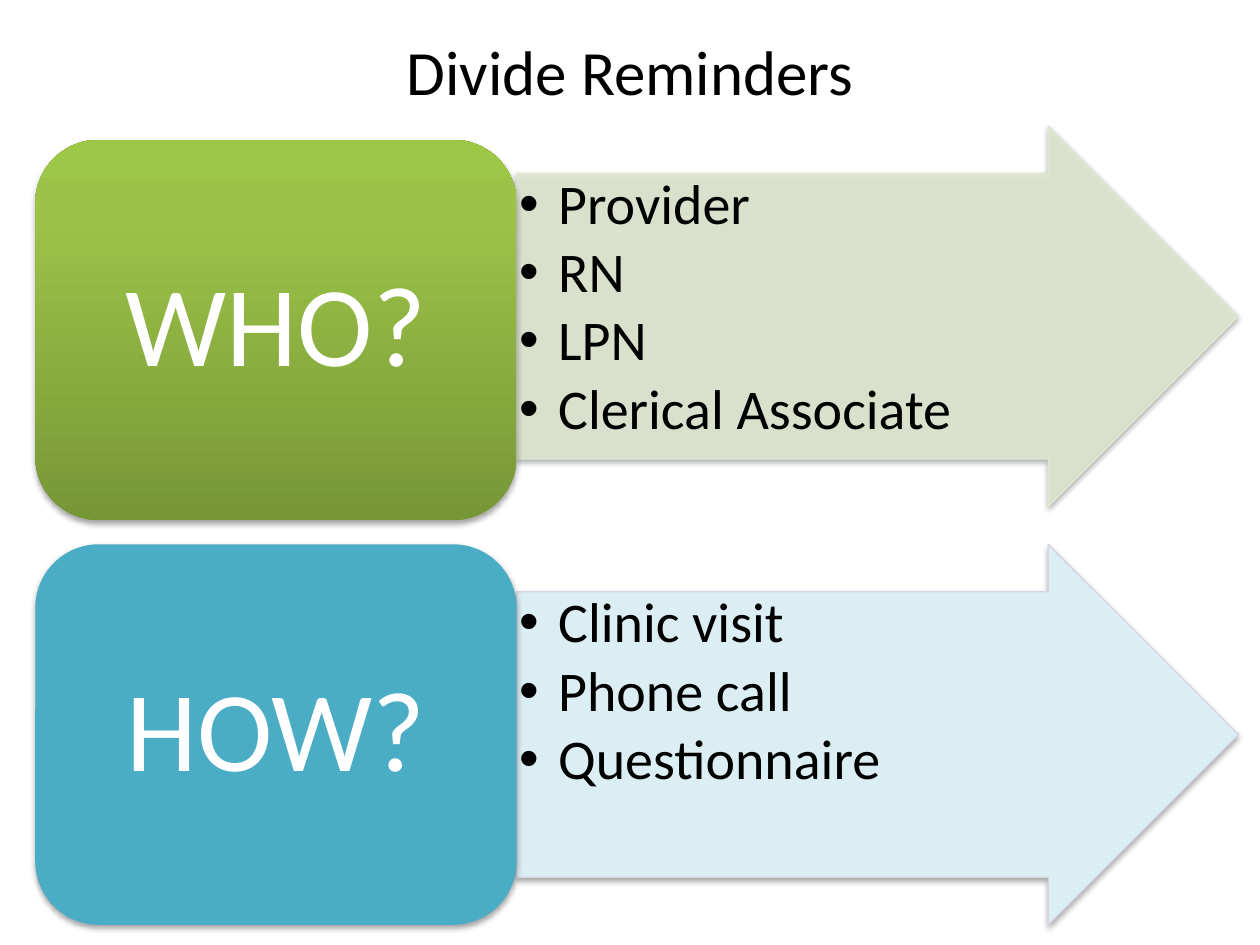
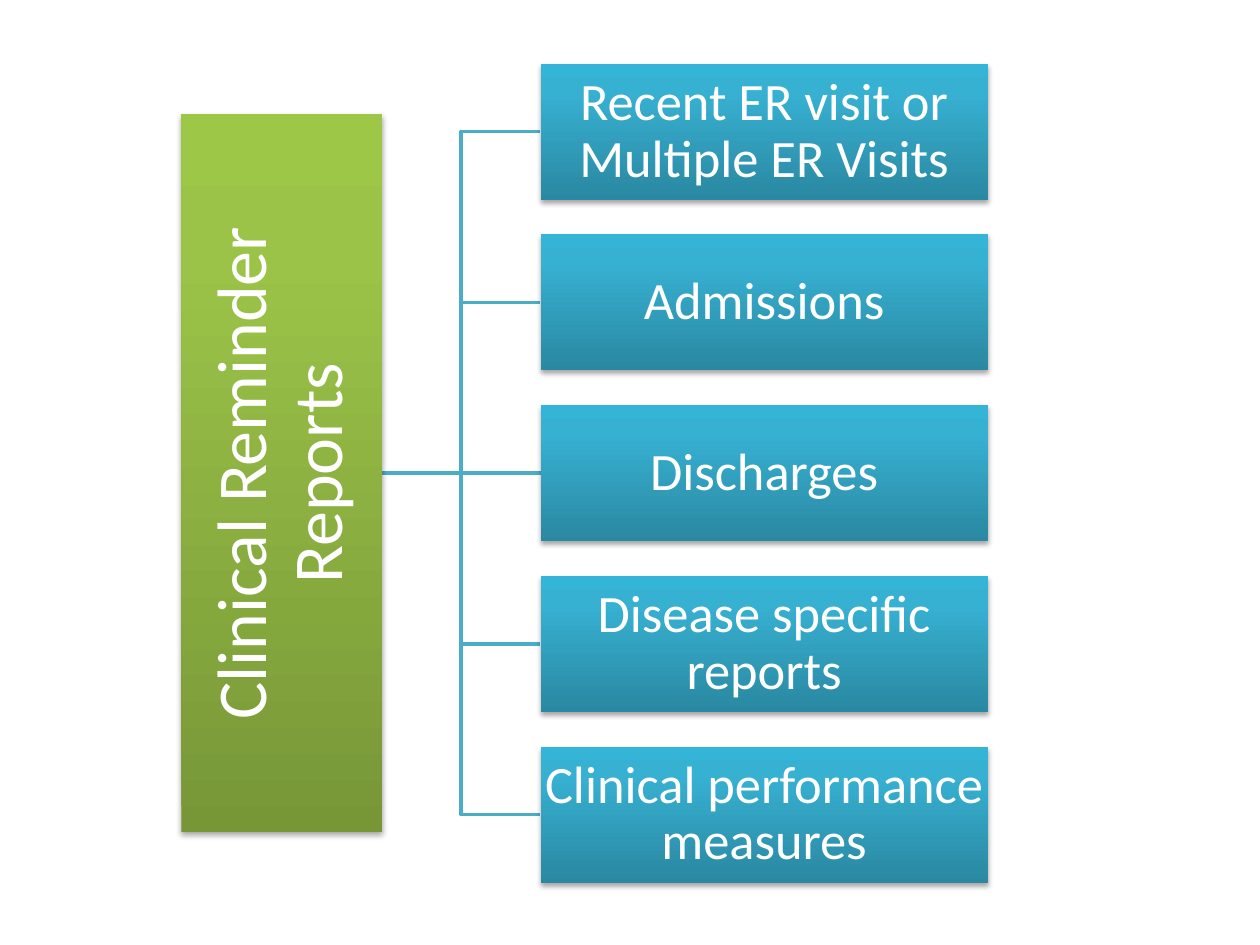
from copy import deepcopy
from lxml import etree
from pptx import Presentation
from pptx import util as u
from pptx.dml.color import RGBColor
from pptx.enum import shapes, text
from pptx.oxml.ns import qn

HUES = {
    "white": "FFFFFF", "black": "000000", "teal": "4BACC6",
    "sage": "DEE7D1", "ice": "DBEEF4", "lilac": "D8D3E0",
    "green": ["779737", "9BC348", "9DC746"],
    "blue": ["2A88A2", "37B1D2", "34B4D6"],
}
FONT = "Calibri"
KIND = shapes.MSO_SHAPE
MID = text.MSO_ANCHOR.MIDDLE

deck = Presentation()
deck.slide_width, deck.slide_height = u.Inches(10), u.Inches(7.5)
COL, ROW = deck.slide_width / 100, deck.slide_height / 75


def area(col, row, wide, high):
    """Turn grid cells into left, top, width and height."""
    return int(col * COL), int(row * ROW), int(wide * COL), int(high * ROW)


def panel(slide, kind, spot, hue, words="", size=0, pad=0.02):
    """Add a filled shape with a soft shadow and centred white text."""
    item = slide.shapes.add_shape(kind, *spot)
    tone = HUES[hue]
    if isinstance(tone, list):
        item.fill.gradient()
        item.fill.gradient_angle = 90
        stops = item._element.spPr.find(".//" + qn("a:gsLst"))
        stops.append(deepcopy(stops[-1]))
        for stop, place, shade in zip(item.fill.gradient_stops, (0, 0.8, 1), tone):
            stop.position = place
            stop.color.rgb = RGBColor.from_string(shade)
    else:
        item.fill.solid()
        item.fill.fore_color.rgb = RGBColor.from_string(tone)
    item.line.fill.background()

    item.shadow.inherit = False
    glow = etree.SubElement(
        item._element.spPr.find(qn("a:effectLst")), qn("a:outerShdw"),
        blurRad="40000", dist="23000", dir="5400000", rotWithShape="0")
    dark = etree.SubElement(glow, qn("a:srgbClr"), val=HUES["black"])
    etree.SubElement(dark, qn("a:alpha"), val="35000")

    if words:
        frame = item.text_frame
        frame.text = words
        frame.word_wrap = True
        frame.vertical_anchor = MID
        frame.margin_left = frame.margin_right = u.Inches(pad)
        frame.margin_top = frame.margin_bottom = u.Inches(pad)
        para = frame.paragraphs[0]
        para.alignment = text.PP_ALIGN.CENTER
        para.line_spacing = 0.9
        font = para.runs[0].font
        font.name, font.size = FONT, u.Pt(size)
        font.color.rgb = RGBColor.from_string(HUES["white"])
    return item


# Slide 1: two questions, each with an arrow of answers
slide = deck.slides.add_slide(deck.slide_layouts[3])
title, *lists = slide.placeholders
title.left, title.top, title.width, title.height = area(0, 0, 100, 11.2)
title.text_frame.text = "Divide Reminders"
title.text_frame.vertical_anchor = MID
font = title.text_frame.paragraphs[0].runs[0].font
font.name, font.size = FONT, u.Pt(36)
font.color.rgb = RGBColor.from_string(HUES["black"])

SPLIT, HIGH = 41, 30.2
ASKS = [
    ("WHO?", "green", 11.1, 10, "sage", "sage",
     ["Provider", "RN", "LPN", "Clerical Associate"]),
    ("HOW?", "teal", 43.2, 43.2, "ice", "lilac",
     ["Clinic visit", "Phone call", "Questionnaire"]),
]
for body, (ask, hue, top, row, tint, edge, lines) in zip(lists, ASKS):
    # Arrow
    arrow = panel(slide, KIND.RIGHT_ARROW, area(SPLIT, row, 57.3, HIGH), tint)
    arrow.adjustments[0], arrow.adjustments[1] = 0.75, 0.5
    arrow.line.color.rgb = RGBColor.from_string(HUES[edge])
    arrow.line.width = u.Pt(0.75)
    if tint == "sage":
        for tone in arrow._element.spPr.findall(qn("a:solidFill") + "/" + qn("a:srgbClr")):
            etree.SubElement(tone, qn("a:alpha"), val="90000")

    # List, brought in front of the arrow
    slide.shapes._spTree.append(body._element)
    body.left, body.top, body.width, body.height = area(
        SPLIT, row + HIGH / 8, 46, HIGH * 0.75)
    frame = body.text_frame
    frame.text = "\n".join(lines)
    frame.auto_size = text.MSO_AUTO_SIZE.NONE
    frame.vertical_anchor = text.MSO_ANCHOR.TOP
    frame.margin_left = frame.margin_right = u.Inches(0.02)
    frame.margin_top = frame.margin_bottom = u.Inches(0.02)
    for para in frame.paragraphs:
        props = para._p.get_or_add_pPr()
        props.set("marL", str(u.Inches(0.31)))
        props.set("indent", str(-u.Inches(0.31)))
        etree.SubElement(props, qn("a:buChar"), char="•")
        para.line_spacing = 0.9
        para.space_before, para.space_after = u.Pt(0), u.Pt(4.4)
        font = para.runs[0].font
        font.name, font.size = FONT, u.Pt(32)
        font.color.rgb = RGBColor.from_string(HUES["black"])

    # Question
    panel(slide, KIND.ROUNDED_RECTANGLE, area(2.8, top, 38.2, HIGH),
          hue, ask, 65, 0.14)

# Slide 2: one bar branching to five reports
slide = deck.slides.add_slide(deck.slide_layouts[6])
REPORTS = [
    "Recent ER visit or Multiple ER Visits", "Admissions", "Discharges",
    "Disease specific reports", "Clinical performance measures",
]
LEFT, RIGHT, CENTRE = 30.3, 42.9, 37.55
TALL, STEP = 10.8, 13.55
tops = [CENTRE - TALL / 2 + STEP * (n - 2) for n in range(len(REPORTS))]

# Branch lines
for top in tops:
    level = top + TALL / 2
    form = (shapes.MSO_CONNECTOR.STRAIGHT if abs(level - CENTRE) < 0.01
            else shapes.MSO_CONNECTOR.ELBOW)
    link = slide.shapes.add_connector(
        form, int(LEFT * COL), int(CENTRE * ROW), int(RIGHT * COL), int(level * ROW))
    link.line.color.rgb = RGBColor.from_string(HUES["teal"])
    link.line.width = u.Pt(2)
    etree.SubElement(link._element.spPr, qn("a:effectLst"))

# Upright bar
bar = panel(slide, KIND.RECTANGLE, area(LEFT - 15.9, CENTRE - 28.5, 15.9, 57),
            "green", "Clinical Reminder Reports", 40, 0.03)
bar.text_frame._txBody.bodyPr.set("vert", "vert270")

# Report boxes
for top, words in zip(tops, REPORTS):
    panel(slide, KIND.RECTANGLE, area(RIGHT, top, 35.5, TALL), "blue", words, 30)

deck.save("out.pptx")
